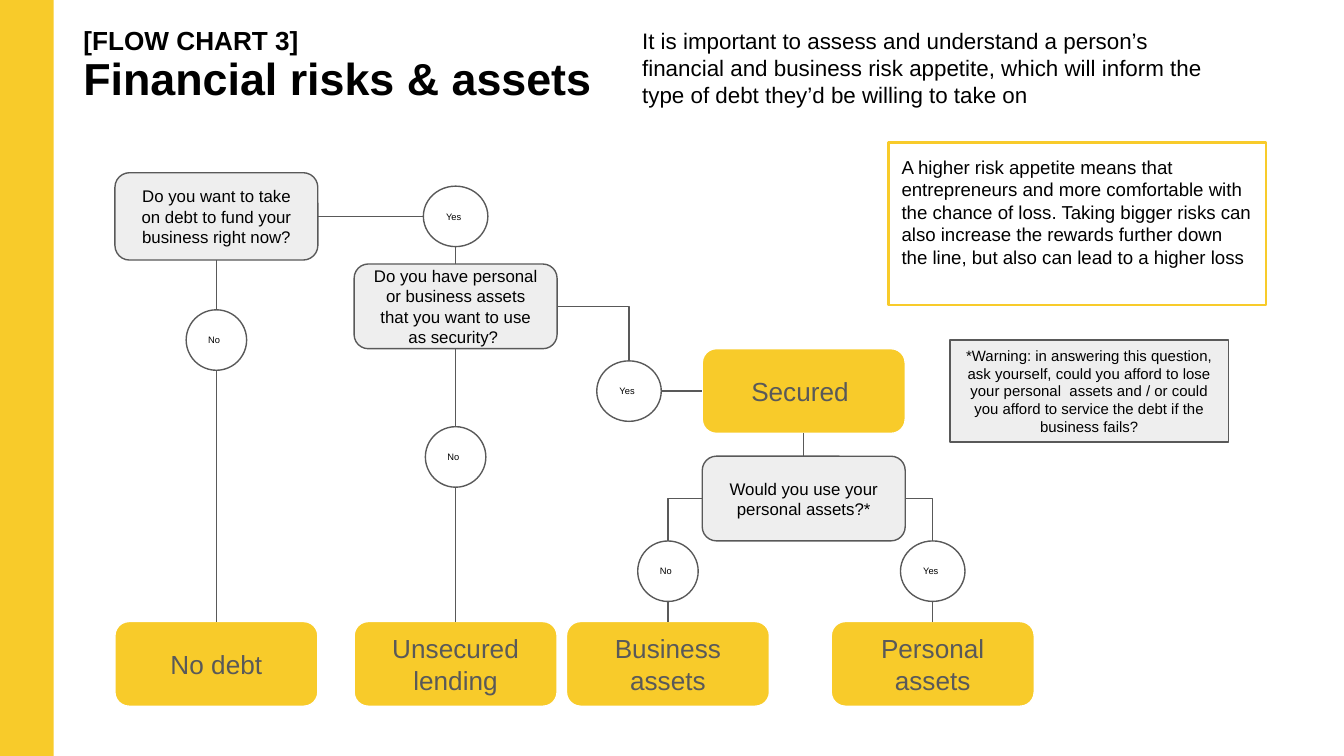
from dataclasses import dataclass
from enum import IntEnum

from pptx import Presentation
from pptx.dml.color import RGBColor
from pptx.enum.shapes import MSO_CONNECTOR, MSO_SHAPE
from pptx.enum.text import MSO_ANCHOR, MSO_AUTO_SIZE, PP_ALIGN
from pptx.oxml.ns import qn
from pptx.util import Inches, Pt
from lxml import etree

SLIDE_WIDTH = 10
SLIDE_HEIGHT = SLIDE_WIDTH * 9 / 16


class Side(IntEnum):
    TOP = 0
    LEFT = 1
    BOTTOM = 2
    RIGHT = 3


@dataclass(frozen=True)
class Theme:
    font: str = "Arial"
    yellow: RGBColor = RGBColor(0xF8, 0xCB, 0x2A)
    grey: RGBColor = RGBColor(0xEE, 0xEE, 0xEE)
    dark: RGBColor = RGBColor(0x59, 0x59, 0x59)
    black: RGBColor = RGBColor(0, 0, 0)
    white: RGBColor = RGBColor(0xFF, 0xFF, 0xFF)
    heading: int = 24
    kicker: int = 14
    outcome: int = 14
    intro: int = 12
    callout: int = 10
    question: int = 9
    warning: int = 8
    answer: int = 5
    thin: float = 0.75
    thick: float = 1.5


class FlowSlide:
    def __init__(self, slide, theme):
        self.slide = slide
        self.theme = theme

    def _frame(self, shape, anchor):
        frame = shape.text_frame
        frame.word_wrap = True
        frame.auto_size = MSO_AUTO_SIZE.NONE
        frame.vertical_anchor = anchor
        frame.margin_left = frame.margin_right = Inches(0.1)
        frame.margin_top = frame.margin_bottom = Inches(0.1)
        return frame

    def _write(self, paragraph, text, size, color=None, align=PP_ALIGN.LEFT, bold=False):
        paragraph.alignment = align
        run = paragraph.add_run()
        run.text = text
        run.font.name = self.theme.font
        run.font.size = Pt(size)
        run.font.bold = bold
        run.font.color.rgb = color or self.theme.black

    def _shape(self, kind, left, top, width, height, fill, line=None, weight=None):
        shape = self.slide.shapes.add_shape(
            kind, Inches(left), Inches(top), Inches(width), Inches(height))
        shape.shadow.inherit = False
        shape.fill.solid()
        shape.fill.fore_color.rgb = fill
        if line is None:
            shape.line.fill.background()
        else:
            shape.line.color.rgb = line
            shape.line.width = Pt(weight or self.theme.thin)
        return shape

    def title(self, lines, left, top, width, height):
        heading = self.slide.shapes.title
        heading.left, heading.top = Inches(left), Inches(top)
        heading.width, heading.height = Inches(width), Inches(height)
        frame = self._frame(heading, MSO_ANCHOR.TOP)
        for index, (text, size) in enumerate(lines):
            paragraph = frame.add_paragraph() if index else frame.paragraphs[0]
            paragraph.line_spacing = 0.9
            paragraph.space_before = Pt(0)
            self._write(paragraph, text, size, bold=True)

    def side_bar(self, width):
        self._shape(MSO_SHAPE.RECTANGLE, 0, 0, width, SLIDE_HEIGHT, self.theme.yellow)

    def intro(self, text, left, top, width, height):
        box = self.slide.shapes.add_textbox(
            Inches(left), Inches(top), Inches(width), Inches(height))
        frame = self._frame(box, MSO_ANCHOR.TOP)
        self._write(frame.paragraphs[0], text, self.theme.intro)

    def callout(self, text, left, top, width, height):
        box = self._shape(MSO_SHAPE.RECTANGLE, left, top, width, height,
                          self.theme.white, self.theme.yellow, self.theme.thick)
        frame = self._frame(box, MSO_ANCHOR.TOP)
        self._write(frame.paragraphs[0], text, self.theme.callout)

    def warning(self, text, left, top, width, height):
        box = self._shape(MSO_SHAPE.RECTANGLE, left, top, width, height,
                          self.theme.grey, self.theme.dark)
        frame = self._frame(box, MSO_ANCHOR.MIDDLE)
        self._write(frame.paragraphs[0], text, self.theme.warning, align=PP_ALIGN.CENTER)

    def _node(self, kind, text, center, size, fill, line, type_size, color, align):
        (x, y), (width, height) = center, size
        node = self._shape(kind, x - width / 2, y - height / 2, width, height, fill, line)
        frame = self._frame(node, MSO_ANCHOR.MIDDLE)
        self._write(frame.paragraphs[0], text, type_size, color, align)
        return node

    def question(self, text, x, y, height=0.63):
        return self._node(MSO_SHAPE.ROUNDED_RECTANGLE, text, (x, y), (1.51, height),
                          self.theme.grey, self.theme.dark, self.theme.question,
                          self.theme.black, PP_ALIGN.CENTER)

    def outcome(self, text, x, y):
        return self._node(MSO_SHAPE.ROUNDED_RECTANGLE, text, (x, y), (1.51, 0.63),
                          self.theme.yellow, self.theme.white, self.theme.outcome,
                          self.theme.dark, PP_ALIGN.CENTER)

    def answer(self, text, x, y):
        width = 0.48 if text == "Yes" else 0.45
        return self._node(MSO_SHAPE.OVAL, text, (x, y), (width, 0.45),
                          self.theme.white, self.theme.dark, self.theme.answer,
                          self.theme.black, PP_ALIGN.LEFT)

    def link(self, start, start_side, end, end_side, elbow=False):
        """Join two nodes; an elbow leaves sideways and turns once."""
        kind = MSO_CONNECTOR.ELBOW if elbow else MSO_CONNECTOR.STRAIGHT
        line = self.slide.shapes.add_connector(
            kind, *side_point(start, start_side), *side_point(end, end_side))
        line.line.color.rgb = self.theme.dark
        line.line.width = Pt(self.theme.thin)
        properties = line._element.spPr
        etree.SubElement(properties, qn("a:effectLst"))
        if elbow:
            properties.find(qn("a:prstGeom")).set("prst", "bentConnector2")
        if has_site(start, start_side):
            line.begin_connect(start, start_side.value)
        if has_site(end, end_side):
            line.end_connect(end, end_side.value)


def side_point(node, side):
    middle_x, middle_y = node.left + node.width // 2, node.top + node.height // 2
    return {
        Side.TOP: (middle_x, node.top),
        Side.LEFT: (node.left, middle_y),
        Side.BOTTOM: (middle_x, node.top + node.height),
        Side.RIGHT: (node.left + node.width, middle_y),
    }[side]


def has_site(node, side):
    """An oval numbers its sites differently: only its top matches a rectangle's."""
    return node.auto_shape_type != MSO_SHAPE.OVAL or side == Side.TOP


def main():
    deck = Presentation()
    deck.slide_width, deck.slide_height = Inches(SLIDE_WIDTH), Inches(SLIDE_HEIGHT)
    theme = Theme()
    flow = FlowSlide(deck.slides.add_slide(deck.slide_layouts[5]), theme)

    flow.side_bar(0.4)
    flow.title([("[FLOW CHART 3]", theme.kicker),
                ("Financial risks & assets", theme.heading)], 0.52, 0.11, 4.1, 0.79)
    flow.intro("It is important to assess and understand a person’s financial and business "
               "risk appetite, which will inform the type of debt they’d be willing to take on",
               4.68, 0.1, 4.5, 0.81)
    flow.callout("A higher risk appetite means that entrepreneurs and more comfortable with the "
                 "chance of loss. Taking bigger risks can also increase the rewards further down "
                 "the line, but also can lead to a higher loss", 6.61, 1.06, 2.81, 1.21)
    flow.warning("*Warning: in answering this question, ask yourself, could you afford to lose "
                 "your personal  assets and / or could you afford to service the debt if the "
                 "business fails?", 7.07, 2.53, 2.07, 0.76)

    no_debt_x, unsecured_x, business_x, secured_x, personal_x = 1.61, 3.39, 4.97, 5.98, 6.94
    outcome_y = 4.94
    no_debt = flow.outcome("No debt", no_debt_x, outcome_y)
    unsecured = flow.outcome("Unsecured lending", unsecured_x, outcome_y)
    business = flow.outcome("Business assets", business_x, outcome_y)
    personal = flow.outcome("Personal assets", personal_x, outcome_y)
    secured = flow.outcome("Secured ", secured_x, 2.91)

    want_debt = flow.question("Do you want to take on debt to fund your business right now?",
                              no_debt_x, 1.61, 0.65)
    have_assets = flow.question("Do you have personal or business assets that you want to use "
                                "as security? ", unsecured_x, 2.28)
    use_personal = flow.question("Would you use your personal assets?*", secured_x, 3.71)

    debt_no = flow.answer("No", no_debt_x, 2.53)
    debt_yes = flow.answer("Yes", unsecured_x, 1.61)
    assets_no = flow.answer("No", unsecured_x, 3.4)
    assets_yes = flow.answer("Yes", 4.68, 2.91)
    personal_no = flow.answer("No", business_x, 4.25)
    personal_yes = flow.answer("Yes", personal_x, 4.25)

    for upper, lower in [(want_debt, debt_no), (debt_no, no_debt), (debt_yes, have_assets),
                         (have_assets, assets_no), (assets_no, unsecured),
                         (secured, use_personal), (personal_no, business),
                         (personal_yes, personal)]:
        flow.link(upper, Side.BOTTOM, lower, Side.TOP)
    for near, far in [(want_debt, debt_yes), (assets_yes, secured)]:
        flow.link(near, Side.RIGHT, far, Side.LEFT)
    for asked, side, reply in [(have_assets, Side.RIGHT, assets_yes),
                               (use_personal, Side.LEFT, personal_no),
                               (use_personal, Side.RIGHT, personal_yes)]:
        flow.link(asked, side, reply, Side.TOP, elbow=True)

    deck.save("out.pptx")


if __name__ == "__main__":
    main()
